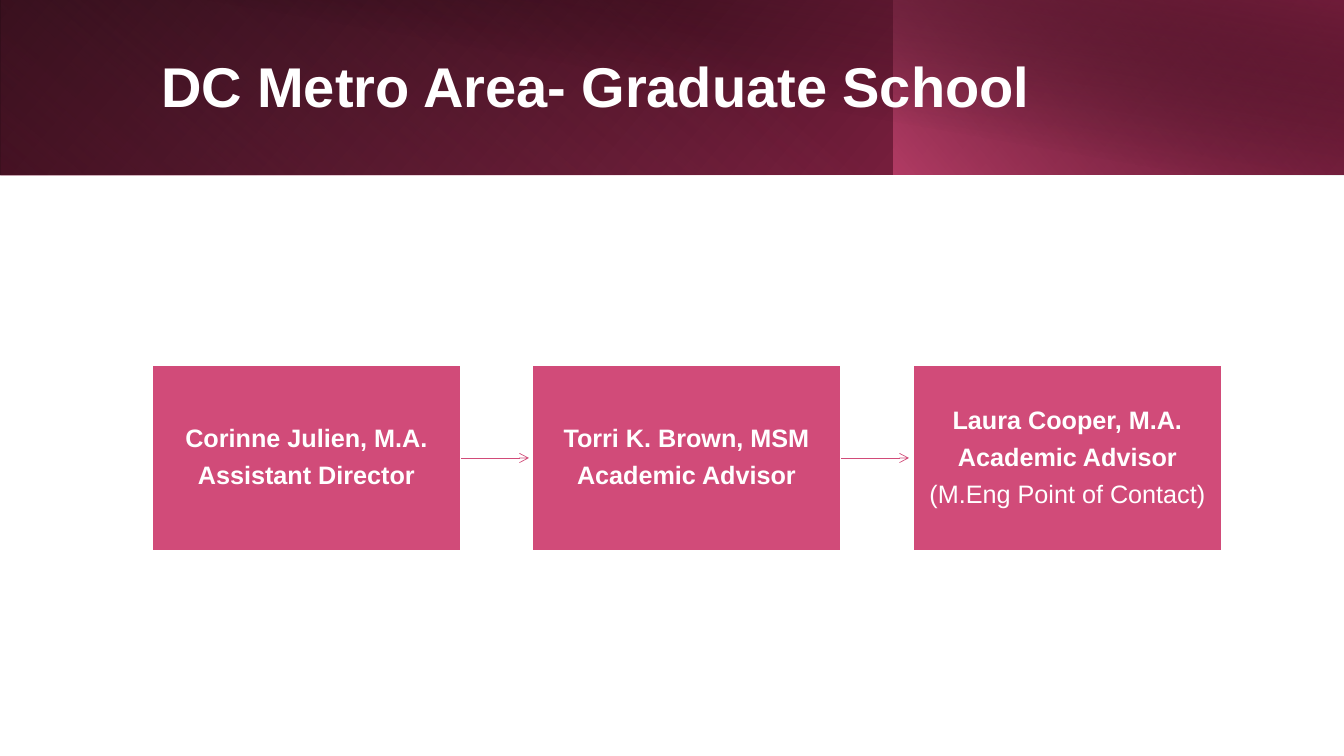
from typing import NamedTuple

from lxml.etree import SubElement
from pptx import Presentation
from pptx.dml.color import RGBColor
from pptx.enum.shapes import MSO_CONNECTOR, MSO_SHAPE
from pptx.enum.text import MSO_ANCHOR, PP_ALIGN
from pptx.oxml import parse_xml
from pptx.oxml.ns import nsdecls, qn
from pptx.util import Pt

SCALE = 914400 / 100.8  # EMU per px
WHITE = RGBColor(0xFF, 0xFF, 0xFF)
BLACK = RGBColor(0x00, 0x00, 0x00)
PINK = RGBColor(0xD1, 0x4B, 0x79)
ROSE = RGBColor(0xAA, 0x2B, 0x57)
WINE = RGBColor(0x71, 0x1D, 0x3A)
FONT = "Arial"


class Stop(NamedTuple):
    pos: int
    color: RGBColor
    alpha: int = 100


class Band(NamedTuple):
    left: int
    width: int
    height: int
    angle: int
    stops: tuple[Stop, Stop]
    rotation: int = 0
    flip: bool = True


class Line(NamedTuple):
    text: str
    bold: bool = True


BANDS = (
    Band(0, 1344, 175, 140, (Stop(0, BLACK), Stop(100, ROSE))),
    Band(0, 895, 175, 230, (Stop(20, PINK, 0), Stop(100, WINE, 55)), rotation=180),
    Band(894, 450, 175, 220, (Stop(0, PINK, 66), Stop(100, BLACK, 30))),
    Band(50, 1294, 176, 280, (Stop(50, BLACK, 0), Stop(99, WINE, 52)), flip=False),
)
STAFF = (
    (Line("Corinne Julien, M.A."), Line("Assistant Director")),
    (Line("Torri K. Brown, MSM"), Line("Academic Advisor")),
    (Line("Laura Cooper, M.A."), Line("Academic Advisor"),
     Line("(M.Eng Point of Contact)", bold=False)),
)
BOX_LEFT, BOX_TOP, BOX_W, BOX_H, BOX_INSET = 152, 365, 309, 186, 14
SPAN = 761  # from the first box to the third
ARROW_W = 68


def px(n: int) -> int:
    return round(n * SCALE)


def add_rect(shapes, left: int, top: int, width: int, height: int):
    sp = shapes.add_shape(MSO_SHAPE.RECTANGLE, px(left), px(top), px(width), px(height))
    sp.shadow.inherit = False
    return sp


def add_band(shapes, band: Band) -> None:
    sp = add_rect(shapes, band.left, 0, band.width, band.height)
    sp.line.fill.background()
    sp.rotation = band.rotation
    spPr = sp._element.spPr
    if band.flip:
        spPr.find(qn("a:xfrm")).set("flipH", "1")
    stops = "".join(
        f'<a:gs pos="{s.pos * 1000}"><a:srgbClr val="{s.color}">'
        f'<a:alpha val="{s.alpha * 1000}"/></a:srgbClr></a:gs>'
        for s in band.stops
    )
    spPr.insert(2, parse_xml(
        f'<a:gradFill {nsdecls("a")} rotWithShape="1"><a:gsLst>{stops}</a:gsLst>'
        f'<a:lin ang="{band.angle * 60000}" scaled="0"/></a:gradFill>'
    ))


def set_text(tf, lines: tuple[Line, ...], size: int, inset: int,
             align: PP_ALIGN, space_after: int = 0) -> None:
    frame_format = {
        "word_wrap": True, "vertical_anchor": MSO_ANCHOR.MIDDLE,
        "margin_left": px(inset), "margin_right": px(inset),
        "margin_top": px(inset), "margin_bottom": px(inset),
    }
    for name, value in frame_format.items():
        setattr(tf, name, value)
    for i, line in enumerate(lines):
        p = tf.add_paragraph() if i else tf.paragraphs[0]
        para_format = {"alignment": align, "line_spacing": 0.9,
                       "space_after": Pt(space_after)}
        for name, value in para_format.items():
            setattr(p, name, value)
        r = p.add_run()
        r.text = line.text
        for name, value in {"name": FONT, "size": Pt(size), "bold": line.bold}.items():
            setattr(r.font, name, value)
        r.font.color.rgb = WHITE


def add_staff_box(shapes, left: int, lines: tuple[Line, ...]):
    sp = add_rect(shapes, left, BOX_TOP, BOX_W, BOX_H)
    sp.fill.solid()
    sp.fill.fore_color.rgb = PINK
    sp.line.color.rgb = WHITE
    sp.line.width = Pt(1)
    set_text(sp.text_frame, lines, 18, BOX_INSET, PP_ALIGN.CENTER, space_after=7)
    return sp


def add_arrow(shapes, box, left: int) -> None:
    x, y = left + BOX_W, BOX_TOP + BOX_H // 2
    cxn = shapes.add_connector(MSO_CONNECTOR.STRAIGHT, px(x), px(y), px(x + ARROW_W), px(y))
    cxn.begin_connect(box, 3)
    cxn.line.color.rgb = PINK
    cxn.line.width = Pt(0.5)
    SubElement(cxn.line._get_or_add_ln(), qn("a:tailEnd"), type="arrow")
    SubElement(cxn._element.spPr, qn("a:effectLst"))


def main() -> None:
    prs = Presentation()
    prs.slide_width, prs.slide_height = px(1344), px(756)
    shapes = prs.slides.add_slide(prs.slide_layouts[6]).shapes

    # Header
    for band in BANDS:
        add_band(shapes, band)
    title = shapes.add_textbox(px(151), px(32), px(1091), px(114))
    set_text(title.text_frame, (Line("DC Metro Area- Graduate School"),),
             40, 10, PP_ALIGN.LEFT)

    # Staff chain
    for i, lines in enumerate(STAFF):
        left = BOX_LEFT + i * SPAN // 2
        box = add_staff_box(shapes, left, lines)
        if i < len(STAFF) - 1:
            add_arrow(shapes, box, left)

    prs.save("out.pptx")


if __name__ == "__main__":
    main()
